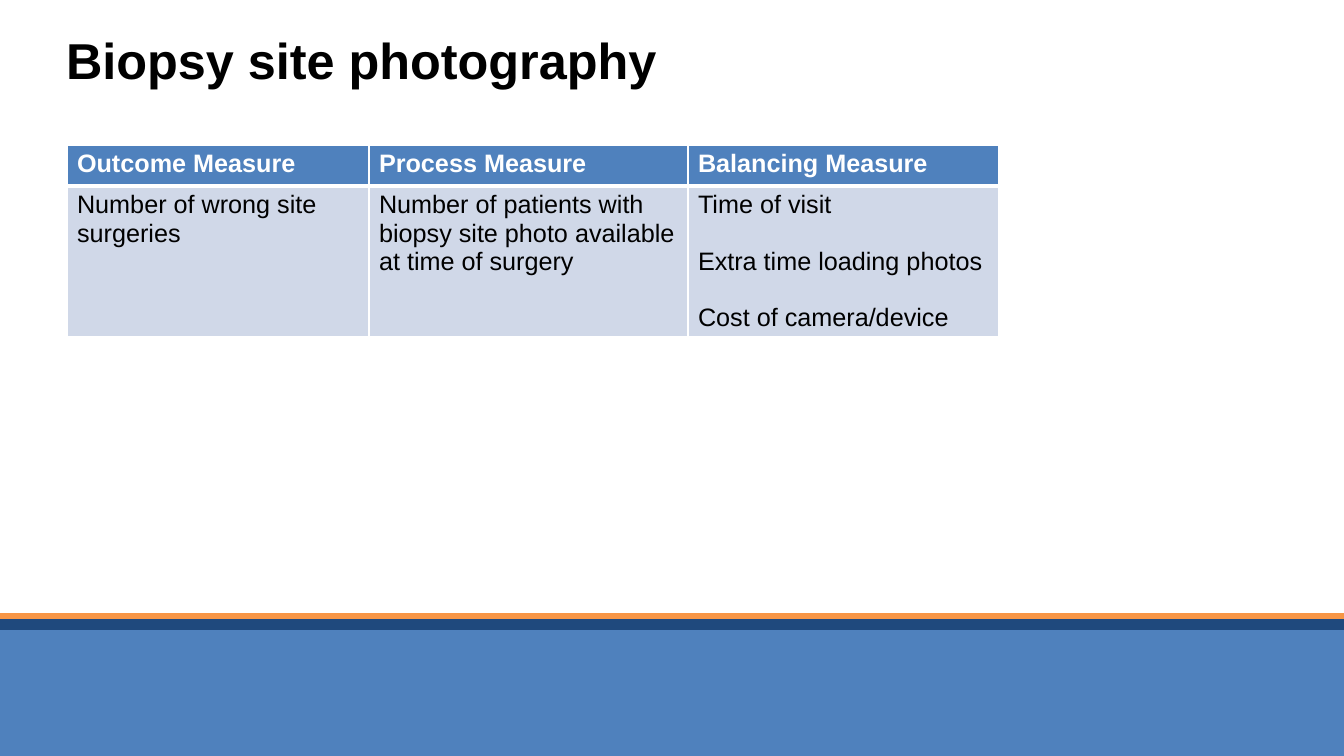
"""Build the biopsy site photography slide with its table of measures."""
from lxml import etree
from pptx import Presentation
from pptx.dml.color import RGBColor
from pptx.enum.shapes import MSO_SHAPE
from pptx.enum.text import MSO_ANCHOR, MSO_AUTO_SIZE, PP_ALIGN
from pptx.oxml.ns import qn
from pptx.util import Emu, Pt

WHITE = RGBColor(0xFF, 0xFF, 0xFF)
BLACK = RGBColor(0x00, 0x00, 0x00)
BLUE = RGBColor(0x4F, 0x81, 0xBD)
NAVY = RGBColor(0x1F, 0x49, 0x7D)
ORANGE = RGBColor(0xF7, 0x96, 0x46)
PALE = RGBColor(0xD0, 0xD8, 0xE8)
FONT = "Arial"


def px(n):
    return Emu(round(n * 914400 / 100.8))


def add_borders(cell, widths):
    tcPr = cell._tc.get_or_add_tcPr()
    for i, (side, width) in enumerate(zip("LRTB", widths)):
        ln = etree.Element(qn(f"a:ln{side}"), w=str(Pt(width)))
        fill = etree.SubElement(ln, qn("a:solidFill"))
        etree.SubElement(fill, qn("a:srgbClr"), val=str(WHITE))
        tcPr.insert(i, ln)


prs = Presentation()
prs.slide_width, prs.slide_height = px(1344), px(756)
slide = prs.slides.add_slide(prs.slide_layouts[5])

for top, height, color in [(613, 11, ORANGE), (624, 132, BLUE), (619, 11, NAVY)]:
    bar = slide.shapes.add_shape(MSO_SHAPE.RECTANGLE, 0, px(top), px(1344), px(height))
    bar.shadow.inherit = False
    bar.fill.solid()
    bar.fill.fore_color.rgb = color
    bar.line.fill.background()

title = slide.shapes.title
title.left, title.top, title.width, title.height = px(56), px(0), px(1221), px(118)
tf = title.text_frame
tf.text = "Biopsy site photography"
tf.word_wrap = True
tf.auto_size = MSO_AUTO_SIZE.NONE
tf.vertical_anchor = MSO_ANCHOR.MIDDLE
p = tf.paragraphs[0]
p.alignment = PP_ALIGN.LEFT
font = p.runs[0].font
font.name, font.size, font.bold = FONT, Pt(36), True
font.color.rgb = BLACK

rows = [
    ["Outcome Measure", "Process Measure", "Balancing Measure"],
    [
        "Number of wrong site surgeries",
        "Number of patients with biopsy site photo available at time of surgery",
        "Time of visit\nExtra time loading photos\nCost of camera/device",
    ],
]
styles = [(BLUE, WHITE, True, (1, 1, 1, 3)), (PALE, BLACK, False, (1, 1, 3, 1))]
col_widths = [302, 319, 311]
row_heights = [41, 150]

table = slide.shapes.add_table(
    len(rows), len(col_widths), px(67), px(145), px(sum(col_widths)), px(sum(row_heights))
).table
for col, width in zip(table.columns, col_widths):
    col.width = px(width)
for r, (texts, style) in enumerate(zip(rows, styles)):
    fill, color, bold, borders = style
    table.rows[r].height = px(row_heights[r])
    for c, text in enumerate(texts):
        cell = table.cell(r, c)
        cell.text_frame.text = text
        cell.fill.solid()
        cell.fill.fore_color.rgb = fill
        add_borders(cell, borders)
        for i, p in enumerate(cell.text_frame.paragraphs):
            if i:
                p.space_before = Pt(20)
            font = p.runs[0].font
            font.name, font.size, font.bold = FONT, Pt(18), bold
            font.color.rgb = color

prs.save("out.pptx")
